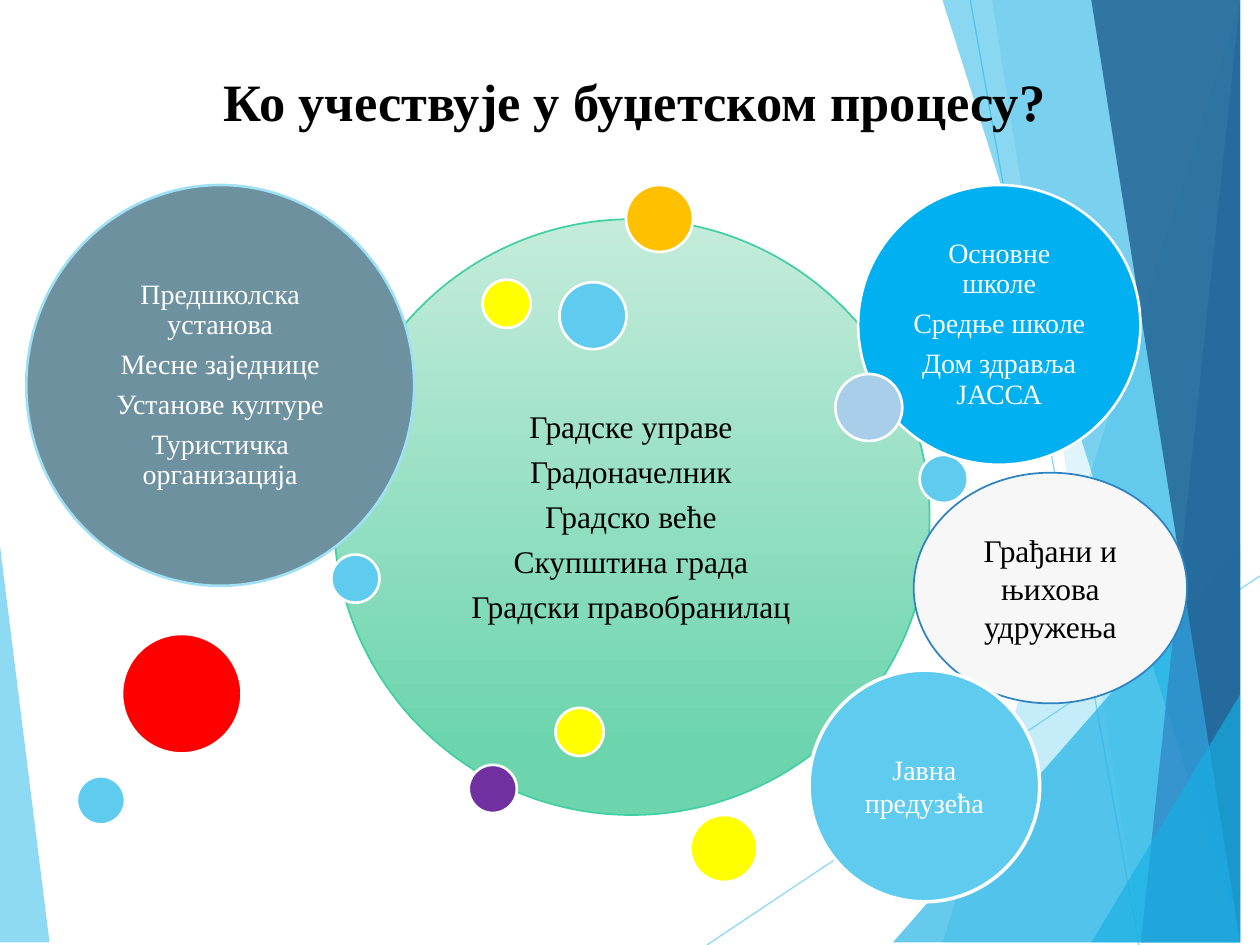
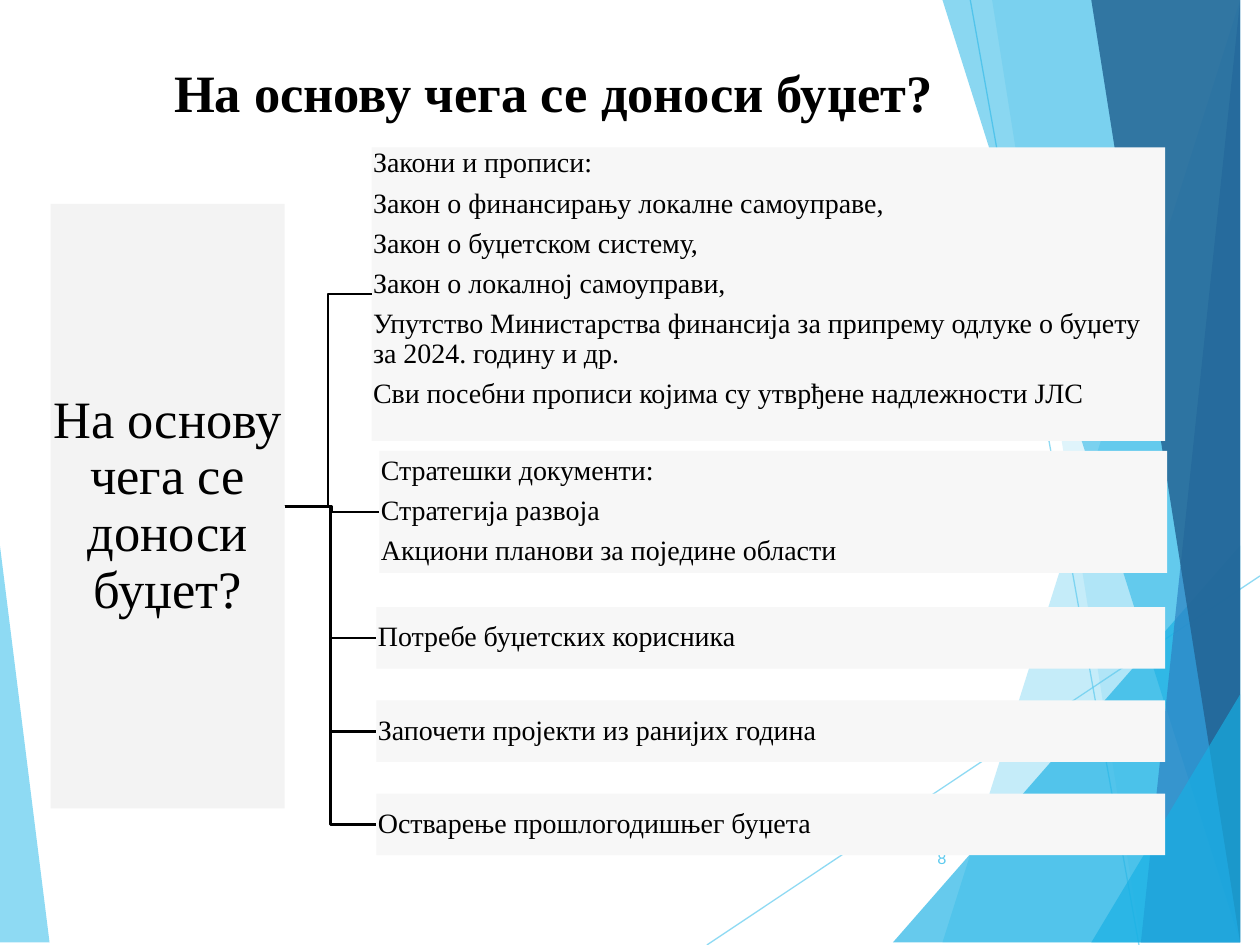
from dataclasses import dataclass
from typing import Any

from lxml.etree import SubElement as Sub
from pptx import Presentation
from pptx.dml.color import RGBColor
from pptx.enum.shapes import MSO_CONNECTOR as Link, MSO_SHAPE as Form
from pptx.enum.text import MSO_ANCHOR as Anchor, MSO_AUTO_SIZE as Fit, PP_ALIGN as Align
from pptx.oxml.ns import qn
from pptx.util import Cm, Pt

WIDE, HIGH = 25.4, 19.05
SERIF = "Times New Roman"
BLACK, WHITE, PALE = "000000", "FFFFFF", "F7F7F7"
SKY, AQUA, BLUE, NAVY = "5FCBEF", "17B0E4", "2E83C3", "226292"
YELLOW, JADE = "FFFF00", "42D0A2"
SMALL, MID, LARGE = 0.97, 1.35, 2.41


@dataclass
class Box:
    x: float
    y: float
    w: float
    h: float

    def lengths(self) -> dict[str, Cm]:
        return dict(left=Cm(self.x), top=Cm(self.y), width=Cm(self.w), height=Cm(self.h))


@dataclass
class Style:
    size: float = 16
    color: str = BLACK
    align: Any = Align.CENTER
    anchor: Any = Anchor.MIDDLE
    inset: float = 0.18
    lead: float = 0.9
    after: float = 0.35
    bold: bool = False
    font: str = SERIF


@dataclass
class Band:
    points: list[tuple[float, float]]
    color: str
    alpha: int


@dataclass
class Disc:
    box: Box
    fill: str
    line: str = WHITE
    weight: float = 1.5
    text: tuple[str, ...] = ()
    style: Style | None = None


def strip(top: float, base: float) -> list[tuple[float, float]]:
    """Outline from a slanted left edge to the right side of the slide."""
    return [(top, 0), (base, HIGH), (WIDE, HIGH), (WIDE, 0)]


def corner(base: float, rise: float) -> list[tuple[float, float]]:
    """Triangle in the bottom right corner."""
    return [(base, HIGH), (WIDE, rise), (WIDE, HIGH)]


def dot(x: float, y: float, size: float, fill: str) -> Disc:
    return Disc(Box(x, y, size, size), fill)


BANDS = [
    Band([(0, 11.15), (1.24, HIGH), (0, HIGH)], SKY, 70),
    Band(strip(24.76, 19.15), SKY, 36),
    Band(strip(20.02, 23.34), SKY, 20),
    Band(corner(18.44, 10.9), AQUA, 66),
    Band(strip(19.48, 24.64), AQUA, 50),
    Band(strip(24.92, 23.04), BLUE, 70),
    Band(strip(22.48, 25.1), NAVY, 82),
    Band(corner(22.4, 13.59), AQUA, 66),
]
RAYS = [(14.25, HIGH, WIDE, 11.61), (19.56, 0, 22.96, HIGH)]

LIGHT = Style(color=WHITE)
DISCS = [
    dot(12.62, 3.73, MID, "FFC000"),
    dot(9.45, 15.42, SMALL, "7030A0"),
    dot(18.54, 9.17, SMALL, SKY),
    dot(13.92, 16.43, MID, YELLOW),
    dot(9.73, 5.64, SMALL, YELLOW),
    dot(6.68, 11.18, SMALL, SKY),
    Disc(Box(0.53, 3.73, 7.82, 8.08), "6E91A0", "9FE0F5",
         text=("Предшколска установа", "Месне заједнице", "Установе културе",
               "Туристичка организација"), style=LIGHT),
    dot(11.28, 5.69, MID, SKY),
    dot(2.46, 12.78, LARGE, "FF0000"),
    Disc(Box(17.3, 3.73, 5.69, 5.64), "00B0F0",
         text=("Основне школе", "Средње школе", "Дом здравља ЈАССА"), style=LIGHT),
    dot(16.84, 7.54, MID, "A8CEEA"),
    dot(1.55, 15.65, SMALL, SKY),
    dot(11.2, 14.27, SMALL, YELLOW),
    Disc(Box(18.42, 9.53, 5.51, 4.65), PALE, BLUE, 1,
         ("Грађани и њихова удружења",), Style(18, lead=1, after=0)),
    Disc(Box(16.31, 13.51, 4.65, 4.67), SKY, WHITE, 2,
         ("Јавна предузећа",), Style(color=WHITE, lead=1, after=0)),
]
CITY = ("Градске управе", "Градоначелник", "Градско веће", "Скупштина града",
        "Градски правобранилац")
LAWS = ("Закони и прописи:", "Закон о финансирању локалне самоуправе,",
        "Закон о буџетском систему,", "Закон о локалној самоуправи,",
        "Упутство Министарства финансија за припрему одлуке о буџету за 2024. годину и др.",
        "Сви посебни прописи којима су утврђене надлежности ЈЛС")
PLANS = ("Стратешки документи:", "Стратегија развоја", "Акциони планови за поједине области")
NEEDS = ("Потребе буџетских корисника", "Започети пројекти из ранијих година",
         "Остварење прошлогодишњег буџета")


def rgb(code: str) -> RGBColor:
    return RGBColor.from_string(code)


def put(item: Any, values: dict[str, Any]) -> None:
    for name, value in values.items():
        setattr(item, name, value)


def fade(shape: Any, alpha: int) -> None:
    """Make the colours of a shape see-through."""
    for node in shape.element.spPr.iter(qn("a:srgbClr")):
        Sub(node, qn("a:alpha"), val=str(alpha * 1000))


def paint(shape: Any, fill: str, line: str = "", weight: float = 0) -> None:
    shape.fill.solid()
    shape.fill.fore_color.rgb = rgb(fill)
    edge(shape, line, weight)


def edge(shape: Any, line: str, weight: float) -> None:
    shape.shadow.inherit = False
    if line:
        shape.line.color.rgb = rgb(line)
        shape.line.width = Pt(weight)
    else:
        shape.line.fill.background()


def write(shape: Any, lines: tuple[str, ...], style: Style) -> None:
    frame = shape.text_frame
    frame.text = "\n".join(lines)
    gap = Cm(style.inset)
    put(frame, dict(auto_size=Fit.NONE, word_wrap=True, vertical_anchor=style.anchor,
                    margin_left=gap, margin_right=gap, margin_top=gap, margin_bottom=gap))
    for par in frame.paragraphs:
        put(par, dict(alignment=style.align, line_spacing=style.lead, space_before=Pt(0),
                      space_after=Pt(style.size * style.after)))
        for run in par.runs:
            put(run.font, dict(name=style.font, size=Pt(style.size), bold=style.bold))
            run.font.color.rgb = rgb(style.color)


def title(slide: Any, text: str, box: Box, align: Any) -> None:
    put(slide.shapes.title, box.lengths())
    write(slide.shapes.title, (text,),
          Style(30, align=align, anchor=Anchor.TOP, inset=0.13, lead=1, after=0, bold=True))


def body(slide: Any, lines: tuple[str, ...], box: Box, style: Style) -> Any:
    """Fill the body placeholder with a list without bullets."""
    shape = slide.placeholders[1]
    put(shape, box.lengths())
    write(shape, lines, style)
    for par in shape.text_frame.paragraphs:
        props = par._p.get_or_add_pPr()
        props.set("marL", "0")
        props.set("indent", "0")
        Sub(props, qn("a:buNone"))
    return shape


def wire(slide: Any, kind: Any, ends: tuple[float, ...], color: str, weight: float) -> Any:
    line = slide.shapes.add_connector(kind, *map(Cm, ends))
    line.line.color.rgb = rgb(color)
    line.line.width = Pt(weight)
    Sub(line.element.spPr, qn("a:effectLst"))
    return line


def block(slide: Any, lines: tuple[str, ...], box: Box, style: Style, fill: str) -> Any:
    shape = slide.shapes.add_shape(Form.RECTANGLE, **box.lengths())
    paint(shape, fill)
    write(shape, lines, style)
    return shape


def decorate(layout: Any, slide: Any) -> None:
    """Draw the shared bands and rays, then move them to the layout."""
    parts = []
    for band in BANDS:
        pen = slide.shapes.build_freeform(*band.points[0], scale=Cm(1))
        pen.add_line_segments(band.points[1:], close=True)
        part = pen.convert_to_shape()
        paint(part, band.color)
        fade(part, band.alpha)
        parts.append(part)
    rays = [wire(slide, Link.STRAIGHT, ends, SKY, 0.75) for ends in RAYS]
    for ray in rays:
        fade(ray, 70)
    front = layout.shapes[0].element
    for part in parts[:1] + rays + parts[1:]:
        front.addprevious(part.element)


def actors(slide: Any) -> None:
    title(slide, "Ко учествује у буџетском процесу?", Box(2.54, 1.27, 20.52, 1.55), Align.CENTER)
    hub = slide.shapes.add_shape(Form.OVAL, **Box(6.73, 4.42, 12.01, 12.01).lengths())
    hub.fill.gradient()
    hub.fill.gradient_angle = 270
    for stop, color, place in zip(hub.fill.gradient_stops, ("C5ECDB", "6DD5AE"), (0, 0.88)):
        stop.color.rgb = rgb(color)
        stop.position = place
    edge(hub, JADE, 1)
    core = body(slide, CITY, Box(8.48, 6.2, 8.48, 8.48), Style(18))
    hub.element.addnext(core.element)
    for disc in DISCS:
        shape = slide.shapes.add_shape(Form.OVAL, **disc.box.lengths())
        paint(shape, disc.fill, disc.line, disc.weight)
        if disc.style:
            write(shape, disc.text, disc.style)


def bases(slide: Any) -> None:
    text = "На основу чега се доноси буџет?"
    title(slide, text, Box(3.38, 1.07, 17.15, 1.55), Align.LEFT)
    page = slide.shapes.add_textbox(**Box(17.91, 16.79, 1.42, 1.02).lengths())
    write(page, ("8",), Style(9, SKY, Align.RIGHT, inset=0.25, lead=1, after=0, font="Lato"))

    root = block(slide, (text,), Box(1.02, 4.11, 4.72, 12.19), Style(30, inset=0.05), "F3F3F3")
    left = Style(align=Align.LEFT, inset=0.03)
    laws = body(slide, LAWS, Box(7.49, 2.97, 16, 5.92),
                Style(align=Align.LEFT, anchor=Anchor.TOP, inset=0.03))
    paint(laws, PALE)
    leaves = [laws, block(slide, PLANS, Box(7.65, 9.09, 15.88, 2.46), left, PALE)]
    for row, need in enumerate(NEEDS):
        box = Box(7.59, 12.24 + 1.88 * row, 15.9, 1.24)
        leaves.append(block(slide, (need,), box, left, PALE))
    for leaf in leaves:
        line = wire(slide, Link.ELBOW, (0, 0, 1, 1), BLACK, 1.5)
        line.begin_connect(root, 3)
        line.end_connect(leaf, 1)


def main() -> None:
    deck = Presentation()
    put(deck, dict(slide_width=Cm(WIDE), slide_height=Cm(HIGH)))
    layout = deck.slide_layouts[1]
    first, second = (deck.slides.add_slide(layout) for _ in range(2))
    decorate(layout, first)
    actors(first)
    bases(second)
    deck.save("out.pptx")


if __name__ == "__main__":
    main()
